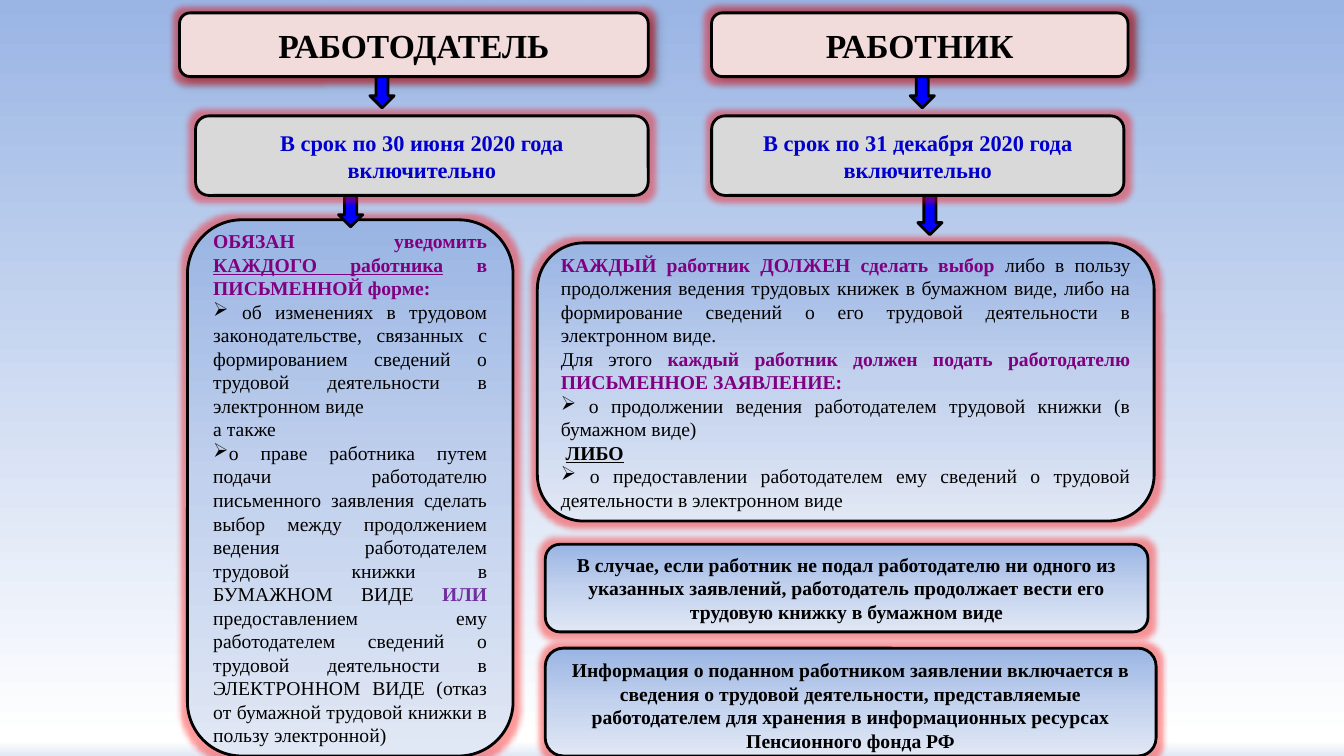
from lxml import etree
from pptx import Presentation
from pptx import util as u
from pptx.dml.color import RGBColor
from pptx.enum import shapes, text
from pptx.oxml.ns import qn

Pt = u.Pt
FONT = "Times New Roman"
COLOURS = {
    "black": "000000", "header": "F2DCDB", "deadline": "D9D9D9",
    "date": "0000CC", "arrow": "0000FF", "duty": "800080", "or": "7030A0",
    "glow": "FF0000",
}
PANEL_STOPS = [(0, "9AB5E4"), (50, "C2D1ED"), (100, "E1E8F5")]
SKY_STOPS = [(0, "9AB5E4"), (98, "FFFFFF"), (100, "E1E8F5")]
BULLET = "➢"
JUSTIFY, CENTER = text.PP_ALIGN.JUSTIFY, text.PP_ALIGN.CENTER


def rgb(name):
    return RGBColor.from_string(COLOURS[name])


def add_colour(parent, value, alpha=None):
    colour = etree.SubElement(parent, qn("a:srgbClr"), val=value)
    if alpha is not None:
        etree.SubElement(colour, qn("a:alpha"), val=str(alpha * 1000))


def fill_gradient(fill, owner, stops):
    """Vertical gradient, first stop at the top."""
    fill.gradient()
    fill.gradient_angle = 270
    stop_list = next(owner.iter(qn("a:gsLst")))
    for old in list(stop_list):
        stop_list.remove(old)
    for percent, value in stops:
        stop = etree.SubElement(stop_list, qn("a:gs"), pos=str(percent * 1000))
        add_colour(stop, value)


def add_effects(card, shadow_angle):
    """Red glow, with a drop shadow when an angle is given."""
    effects = card._element.spPr.find(qn("a:effectLst"))
    glow = etree.SubElement(effects, qn("a:glow"), rad=str(Pt(8)))
    add_colour(glow, COLOURS["glow"], 40)
    if shadow_angle is not None:
        shadow = etree.SubElement(
            effects, qn("a:outerShdw"), blurRad=str(Pt(4)), dist=str(Pt(3)),
            dir=str(shadow_angle * 60000), algn="tl", rotWithShape="0")
        add_colour(shadow, COLOURS["black"], 40)


def outlined(slide, kind, box):
    item = slide.shapes.add_shape(kind, *(Pt(length) for length in box))
    item.shadow.inherit = False
    item.line.color.rgb = rgb("black")
    item.line.width = Pt(2)
    return item


def add_arrow(slide, center, top, height=22.3):
    arrow = outlined(slide, shapes.MSO_SHAPE.DOWN_ARROW,
                     (center - 8.65, top, 17.3, height))
    arrow.fill.solid()
    arrow.fill.fore_color.rgb = rgb("arrow")


def add_card(slide, box, paragraphs, size=14, fill=None, align=CENTER,
             shadow_angle=None):
    """A paragraph is (marker, runs); a run is (words, colour, bold, underline)."""
    card = outlined(slide, shapes.MSO_SHAPE.ROUNDED_RECTANGLE, box)
    if fill:
        card.fill.solid()
        card.fill.fore_color.rgb = rgb(fill)
    else:
        fill_gradient(card.fill, card._element.spPr, PANEL_STOPS)
    add_effects(card, shadow_angle)
    frame = card.text_frame
    frame.word_wrap = True
    frame.vertical_anchor = text.MSO_ANCHOR.MIDDLE
    for number, (marker, runs) in enumerate(paragraphs):
        paragraph = frame.paragraphs[0] if number == 0 else frame.add_paragraph()
        paragraph.alignment = align
        properties = paragraph._p.get_or_add_pPr()
        if marker == BULLET:
            etree.SubElement(properties, qn("a:buChar"), char=BULLET)
        elif marker == "indent":
            properties.set("marL", str(Pt(3.5)))
        for words, colour, bold, underline in runs:
            run = paragraph.add_run()
            run.text = words
            run.font.name, run.font.size = FONT, Pt(size)
            run.font.bold, run.font.underline = bold, underline
            run.font.color.rgb = rgb(colour)
    return card


def strong(words, colour="black", underline=False):
    return words, colour, True, underline


def plain(words):
    return words, "black", False, False


def party_heading(slide, box, party, deadline, deadline_left, deadline_width,
                  arrow_center, shadow_angle):
    """Name of the party, an arrow and its deadline."""
    left, top, width, height = box
    add_card(slide, (left, top, width, 45.5), [(None, [strong(party)])],
             24, "header", shadow_angle=shadow_angle)
    add_card(slide, (deadline_left, top + height - 56.8, deadline_width, 56.8),
             [(None, [strong(deadline, "date")])], 16, "deadline")
    add_arrow(slide, arrow_center, top + 45.5)


def employer_duties(slide, box):
    add_card(slide, box, [
        (None, [strong("ОБЯЗАН уведомить ", "duty"),
                strong("КАЖДОГО работника", "duty", True),
                strong(" в ПИСЬМЕННОЙ форме:", "duty")]),
        (BULLET, [plain(" об изменениях в трудовом законодательстве, связанных "
                        "с формированием сведений о трудовой деятельности в "
                        "электронном виде")]),
        (None, [plain("а также")]),
        (BULLET, [plain("о праве работника путем подачи работодателю "
                        "письменного заявления сделать выбор между "
                        "продолжением ведения работодателем трудовой книжки "
                        "в БУМАЖНОМ ВИДЕ "),
                  strong("ИЛИ ", "or"),
                  plain("предоставлением ему работодателем сведений о трудовой "
                        "деятельности в ЭЛЕКТРОННОМ ВИДЕ (отказ от бумажной "
                        "трудовой книжки в пользу электронной)")]),
    ], align=JUSTIFY)
    add_arrow(slide, box[0] + 116.6, box[1] - 17.3)


def employee_choice(slide, box):
    add_card(slide, box, [
        (None, [strong("КАЖДЫЙ работник ДОЛЖЕН сделать выбор ", "duty"),
                plain("либо в пользу продолжения ведения трудовых книжек в "
                      "бумажном виде, либо на формирование сведений о его "
                      "трудовой деятельности в электронном виде.")]),
        (None, [plain("Для этого "),
                strong("каждый работник должен подать работодателю "
                       "ПИСЬМЕННОЕ ЗАЯВЛЕНИЕ:", "duty")]),
        (BULLET, [plain(" о продолжении ведения работодателем трудовой книжки "
                        "(в бумажном виде)")]),
        ("indent", [strong("ЛИБО", underline=True)]),
        (BULLET, [plain(" о предоставлении работодателем ему сведений о "
                        "трудовой деятельности в электронном виде")]),
    ], align=JUSTIFY)
    add_arrow(slide, box[0] + 280.5, box[1] - 33.8, 28)


def outcome_notes(slide, box):
    left, top, width, height = box
    add_card(slide, (left, top, width - 5.8, 62.6), [(None, [strong(
        "В случае, если работник не подал работодателю ни одного из указанных "
        "заявлений, работодатель продолжает вести его трудовую книжку в "
        "бумажном виде")])])
    registry = add_card(slide, (left, top + height - 77, width, 77), [(None, [strong(
        "Информация о поданном работником заявлении включается в сведения о "
        "трудовой деятельности, представляемые работодателем для хранения в "
        "информационных ресурсах Пенсионного фонда РФ")])])
    registry.text_frame.margin_top = Pt(8)


def main():
    deck = Presentation()
    deck.slide_width, deck.slide_height = Pt(960), Pt(540)
    slide = deck.slides.add_slide(deck.slide_layouts[6])
    fill_gradient(slide.background.fill, slide._element, SKY_STOPS)

    employee_choice(slide, (383.8, 173.5, 440.6, 198.7))
    employer_duties(slide, (133.9, 157, 232.6, 383))
    outcome_notes(slide, (389.5, 388.8, 436.3, 151.2))
    party_heading(slide, (128.2, 9.2, 334.8, 130.4), "РАБОТОДАТЕЛЬ",
                  "В срок по 30 июня 2020 года включительно",
                  139.7, 323.3, 272.9, 45)
    party_heading(slide, (508.3, 9.2, 297.4, 130.4), "РАБОТНИК",
                  "В срок по 31 декабря 2020 года включительно",
                  508.3, 294.5, 658.8, 0)
    deck.save("out.pptx")


if __name__ == "__main__":
    main()
